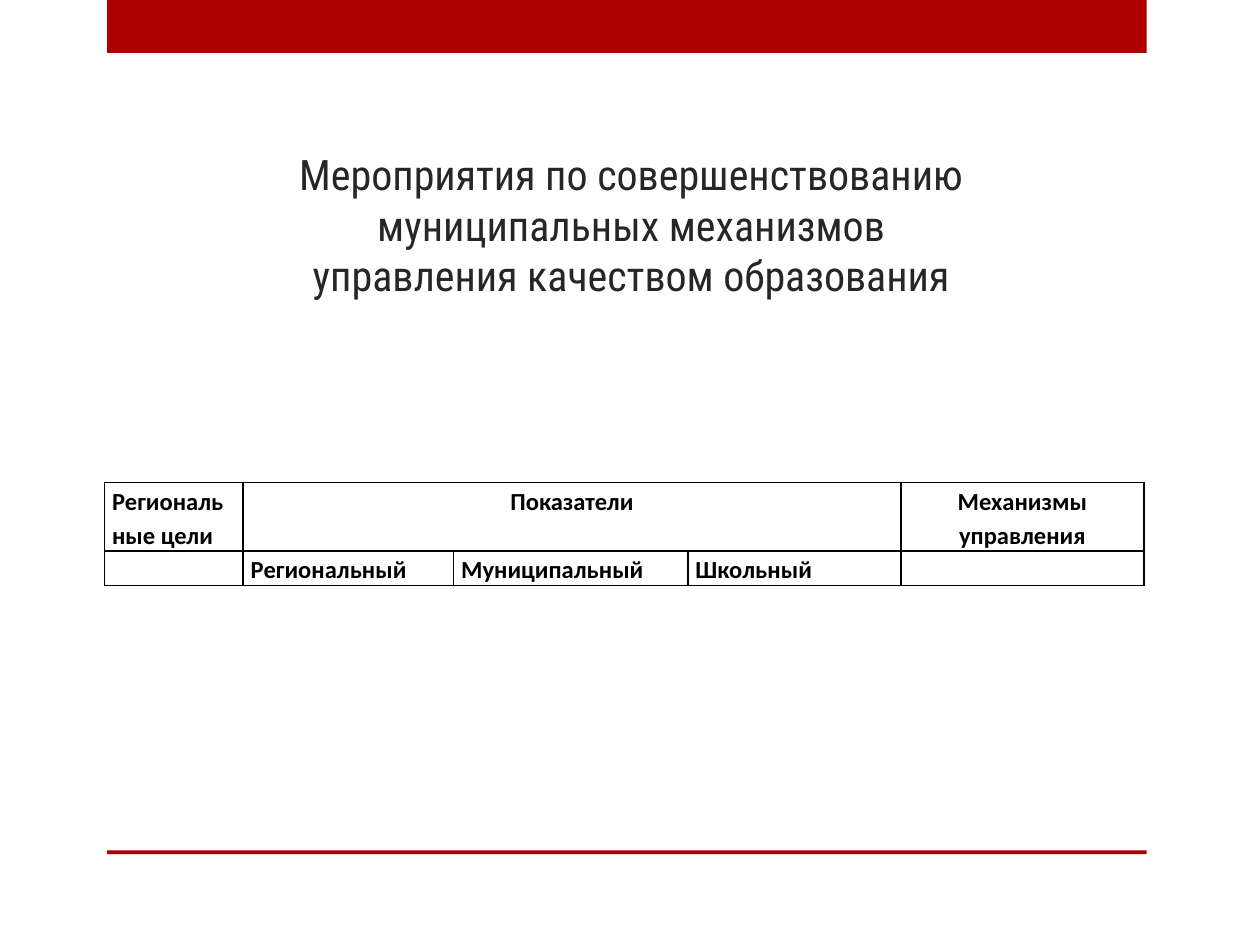
from lxml import etree
from pptx import Presentation
from pptx.dml.color import RGBColor
from pptx.enum.shapes import MSO_SHAPE
from pptx.enum.text import MSO_ANCHOR, MSO_AUTO_SIZE, PP_ALIGN
from pptx.oxml.ns import qn
from pptx.util import Inches, Pt

RECT = MSO_SHAPE.RECTANGLE
BOTTOM = MSO_ANCHOR.BOTTOM
FIXED = MSO_AUTO_SIZE.NONE
LEFT, CENTER = PP_ALIGN.LEFT, PP_ALIGN.CENTER

COLORS = {"red": "AD0101", "title": "262626", "black": "000000"}
WIDTH, HEIGHT = 10, 7.5
COLS = [1.1, 1.67, 1.86, 1.69, 1.93]
ROWS = [0.54, 0.27]
# Text and alignment of each filled cell, by row and column
CELLS = {
    (0, 0): ("Региональные цели", LEFT),
    (0, 1): ("Показатели", CENTER),
    (0, 4): ("Механизмы управления", CENTER),
    (1, 1): ("Региональный", LEFT),
    (1, 2): ("Муниципальный", LEFT),
    (1, 3): ("Школьный", LEFT),
}


def color(name):
    return RGBColor.from_string(COLORS[name])


def style(font, face, size, name, bold=False):
    font.name, font.size, font.bold = face, Pt(size), bold
    font.color.rgb = color(name)


def add_bar(slide, top, height):
    bar = slide.shapes.add_shape(
        RECT, Inches(0.85), Inches(top), Inches(8.25), Inches(height))
    bar.shadow.inherit = False
    bar.fill.solid()
    bar.fill.fore_color.rgb = color("red")
    bar.line.fill.background()


def set_title(slide, text):
    title = slide.shapes.title
    title.left, title.top = Inches(1.3), Inches(0.68)
    title.width, title.height = Inches(7.42), Inches(1.75)
    frame = title.text_frame
    frame.text = text
    frame.word_wrap = True
    frame.auto_size = FIXED
    frame.vertical_anchor = BOTTOM
    para = frame.paragraphs[0]
    para.alignment = CENTER
    style(para.font, "Roboto Condensed", 24, "title")


def add_border(cell):
    props = cell._tc.get_or_add_tcPr()
    for i, side in enumerate(("a:lnL", "a:lnR", "a:lnT", "a:lnB")):
        line = etree.Element(qn(side), w=str(Pt(1)))
        fill = etree.SubElement(line, qn("a:solidFill"))
        etree.SubElement(fill, qn("a:srgbClr"), val=COLORS["black"])
        props.insert(i, line)


def fill_cell(cell, text, align):
    cell.margin_left = cell.margin_right = Inches(0.06)
    cell.margin_top = cell.margin_bottom = 0
    cell.fill.background()
    add_border(cell)
    para = cell.text_frame.paragraphs[0]
    para.alignment = align
    para.line_spacing = 1.15
    if text:
        para.text = text
        style(para.font, "Calibri", 14, "black", True)
    else:
        # Keep an empty cell from stretching its row
        etree.SubElement(para._p, qn("a:endParaRPr"), sz="1400")


def add_grid(slide):
    table = slide.shapes.add_table(
        len(ROWS), len(COLS), Inches(0.83), Inches(3.83),
        Inches(sum(COLS)), Inches(sum(ROWS))).table
    table.first_row = table.horz_banding = False
    for col, size in zip(table.columns, COLS):
        col.width = Inches(size)
    for row, size in zip(table.rows, ROWS):
        row.height = Inches(size)
    for r in range(len(ROWS)):
        for c in range(len(COLS)):
            fill_cell(table.cell(r, c), *CELLS.get((r, c), ("", LEFT)))
    table.cell(0, 1).merge(table.cell(0, 3))


def main():
    deck = Presentation()
    deck.slide_width, deck.slide_height = Inches(WIDTH), Inches(HEIGHT)
    slide = deck.slides.add_slide(deck.slide_layouts[5])

    # Red bars at the head and foot
    add_bar(slide, 0, 0.42)
    add_bar(slide, 0.9 * HEIGHT, 0.03)

    # Title and table of indicators
    set_title(slide, "Мероприятия по совершенствованию муниципальных "
                     "механизмов\vуправления качеством образования")
    add_grid(slide)
    deck.save("out.pptx")


if __name__ == "__main__":
    main()
